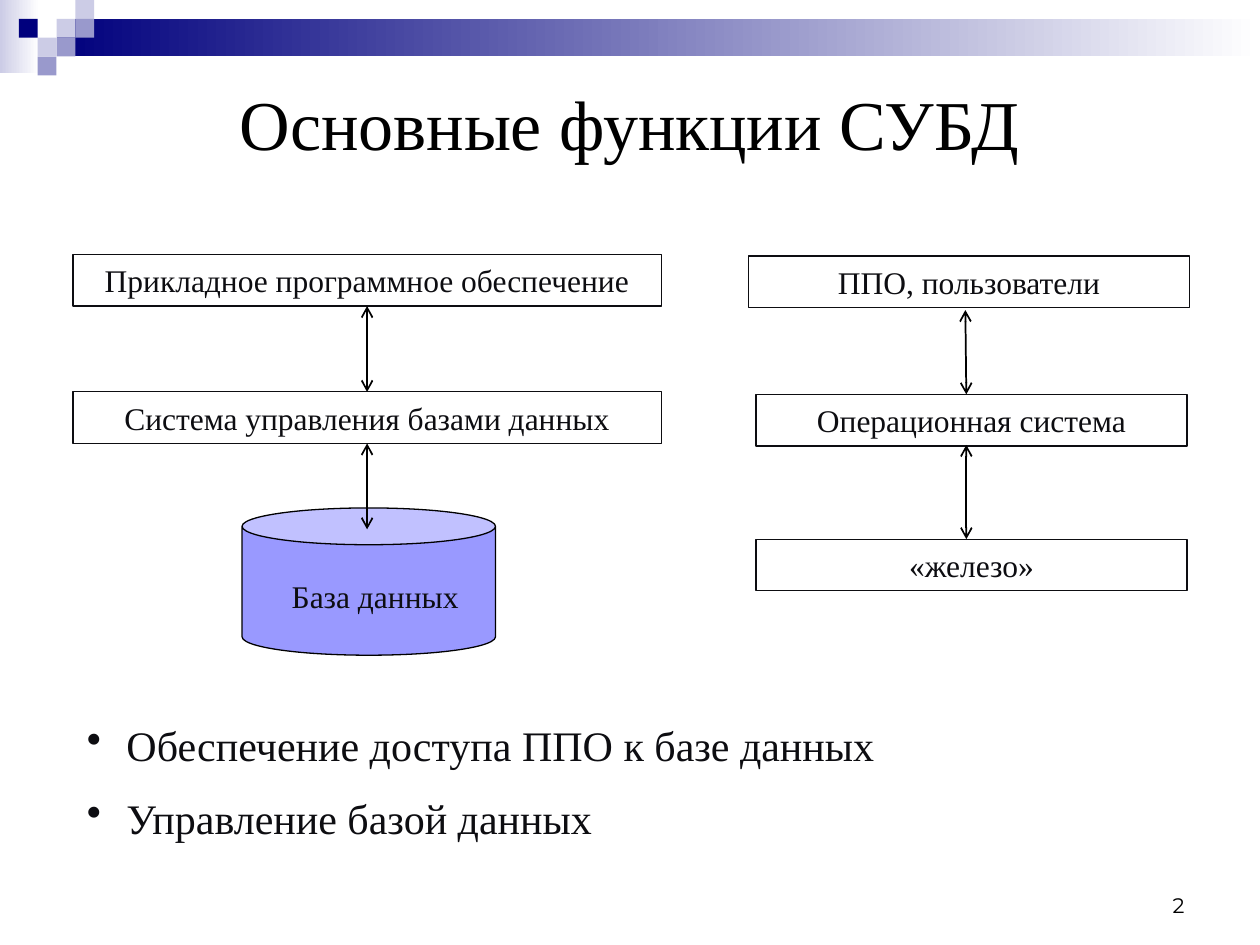
import dataclasses
import typing

import lxml.etree
import pptx
import pptx.dml.color
import pptx.enum.dml
import pptx.enum.shapes
import pptx.enum.text
import pptx.oxml
import pptx.oxml.ns
import pptx.util

Cm = pptx.util.Cm
Pt = pptx.util.Pt
Align = pptx.enum.text.PP_ALIGN
Anchor = pptx.enum.text.MSO_ANCHOR
Preset = pptx.enum.shapes.MSO_SHAPE
qn = pptx.oxml.ns.qn


@dataclasses.dataclass(frozen=True)
class Theme:
    navy: str = "00007D"
    lilac: str = "9999CC"
    pale: str = "CCCCE6"
    white: str = "FFFFFF"
    cylinder: str = "9999FF"
    black: str = "000000"
    ink: str = "0D0D11"
    serif: str = "Times New Roman"
    sans: str = "Montserrat"
    title_size: int = 40
    list_size: int = 24
    label_size: int = 18
    number_size: int = 12
    outline: float = 0.75
    arrow: float = 1


THEME = Theme()


class Area(typing.NamedTuple):
    """Left, top, width and height in centimetres."""
    left: float
    top: float
    width: float
    height: float

    def lengths(self) -> list:
        return [Cm(value) for value in self]


class Box(typing.NamedTuple):
    text: str
    area: Area


class Arrow(typing.NamedTuple):
    """Ends in centimetres; upper and lower name the boxes it is joined to."""
    start: tuple
    end: tuple
    upper: typing.Optional[int] = None
    lower: typing.Optional[int] = None


class Tile(typing.NamedTuple):
    column: int
    row: int
    color: str


def rgb(value: str) -> pptx.dml.color.RGBColor:
    return pptx.dml.color.RGBColor.from_string(value)


def apply_format(target, values: dict) -> None:
    for name, value in values.items():
        setattr(target, name, value)


def write_text(shape, lines: list, size: float, color: str = THEME.ink, font: str = THEME.serif,
               align=Align.CENTER, anchor=Anchor.MIDDLE) -> None:
    frame = shape.text_frame
    apply_format(frame, {"word_wrap": True, "vertical_anchor": anchor})
    frame.text = "\n".join(lines)
    for paragraph in frame.paragraphs:
        paragraph.alignment = align
        apply_format(paragraph.font, {"name": font, "size": Pt(size)})
        paragraph.font.color.rgb = rgb(color)


def add_text(slide, area: Area, lines: list, size: float, **options):
    shape = slide.shapes.add_textbox(*area.lengths())
    write_text(shape, lines, size, **options)
    return shape


def add_figure(slide, area: Area, preset=Preset.RECTANGLE, fill: typing.Optional[str] = None,
               line: typing.Optional[str] = None):
    shape = slide.shapes.add_shape(preset, *area.lengths())
    shape.shadow.inherit = False
    if fill:
        shape.fill.solid()
        shape.fill.fore_color.rgb = rgb(fill)
    else:
        shape.fill.background()
    if line:
        shape.line.color.rgb = rgb(line)
        shape.line.width = Pt(THEME.outline)
    else:
        shape.line.fill.background()
    return shape


def add_fade(slide, area: Area, color: str) -> None:
    fill = add_figure(slide, area).fill
    fill.gradient()
    fill.gradient_angle = 0
    for stop, value in zip(fill.gradient_stops, (color, THEME.white)):
        stop.color.rgb = rgb(value)


def add_box(slide, box: Box):
    shape = add_figure(slide, box.area, line=THEME.ink)
    write_text(shape, [box.text], THEME.label_size)
    return shape


def add_arrow(slide, arrow: Arrow, boxes: list) -> None:
    ends = [Cm(value) for value in arrow.start + arrow.end]
    connector = slide.shapes.add_connector(pptx.enum.shapes.MSO_CONNECTOR.STRAIGHT, *ends)
    if arrow.upper is not None:
        connector.begin_connect(boxes[arrow.upper], 2)
    if arrow.lower is not None:
        connector.end_connect(boxes[arrow.lower], 0)
    connector.line.color.rgb = rgb(THEME.black)
    connector.line.width = Pt(THEME.arrow)
    line = connector.line._get_or_add_ln()
    for end in ("a:headEnd", "a:tailEnd"):
        lxml.etree.SubElement(line, qn(end), type="arrow")
    lxml.etree.SubElement(connector._element.spPr, qn("a:effectLst"))


def add_bullets(shape, indent: float, gap: float) -> None:
    for index, paragraph in enumerate(shape.text_frame.paragraphs):
        if index:
            paragraph.space_before = Pt(gap)
        properties = paragraph._p.get_or_add_pPr()
        properties.set("marL", str(Cm(indent)))
        properties.set("indent", str(-Cm(indent)))
        bullet = pptx.oxml.parse_xml(f'<a:buChar {pptx.oxml.ns.nsdecls("a")} char="•"/>')
        properties.insert_element_before(bullet, "a:tabLst", "a:defRPr", "a:extLst")


TILE = 0.38
TILES = [
    Tile(3, 1, THEME.pale), Tile(4, 0, THEME.pale), Tile(4, 1, THEME.lilac), Tile(2, 2, THEME.pale),
    Tile(1, 1, THEME.navy), Tile(3, 2, THEME.lilac), Tile(2, 3, THEME.lilac),
]
BOXES = [
    Box("Прикладное программное обеспечение", Area(1.47, 5.13, 11.86, 1.04)),
    Box("Система управления базами данных", Area(1.47, 7.9, 11.86, 1.04)),
    Box("ППО, пользователи", Area(15.09, 5.16, 8.89, 1.04)),
    Box("Операционная система", Area(15.24, 7.95, 8.69, 1.04)),
    Box("«железо»", Area(15.24, 10.87, 8.69, 1.04)),
]
ARROWS = [
    Arrow((7.4, 6.22), (7.4, 7.9), upper=0, lower=1),
    Arrow((7.4, 8.97), (7.4, 10.67), upper=1),
    Arrow((19.46, 6.25), (19.48, 7.95)),
    Arrow((19.48, 8.97), (19.48, 10.87)),
]
FUNCTIONS = ["Обеспечение доступа ППО к базе данных", "Управление базой данных"]


def main() -> None:
    presentation = pptx.Presentation()
    apply_format(presentation, {"slide_width": Cm(25.4), "slide_height": Cm(19.05)})
    slide = presentation.slides.add_slide(presentation.slide_layouts[6])

    # Header band with its mosaic of tiles
    add_fade(slide, Area(0, 0, 0.79, 1.47), THEME.pale)
    add_fade(slide, Area(3 * TILE, TILE, 25.4 - 3 * TILE, 2 * TILE), THEME.navy)
    for tile in TILES:
        area = Area((tile.column) * TILE, tile.row * TILE, TILE, TILE)
        add_figure(slide, area, fill=tile.color)

    # Title
    add_text(slide, Area(1.9, 1.32, 21.59, 2.31), ["Основные функции СУБД"],
             THEME.title_size, color=THEME.black)

    # Database cylinder, layers and the arrows between them
    add_figure(slide, Area(4.88, 10.24, 5.11, 2.97), Preset.CAN, THEME.cylinder, THEME.black)
    add_text(slide, Area(5.51, 11.51, 4.11, 1.02), ["База данных"], THEME.label_size)
    boxes = [add_box(slide, box) for box in BOXES]
    for arrow in ARROWS:
        add_arrow(slide, arrow, boxes)

    # List of functions
    functions = add_text(slide, Area(1.5, 14.33, 21.16, 2.82), FUNCTIONS,
                         THEME.list_size, align=Align.LEFT)
    add_bullets(functions, indent=0.8, gap=13)

    # Slide number
    add_text(slide, Area(18.21, 17.35, 5.92, 1.27), ["2"], THEME.number_size, color=THEME.black,
             font=THEME.sans, align=Align.RIGHT, anchor=Anchor.BOTTOM)

    presentation.save("out.pptx")


if __name__ == "__main__":
    main()
